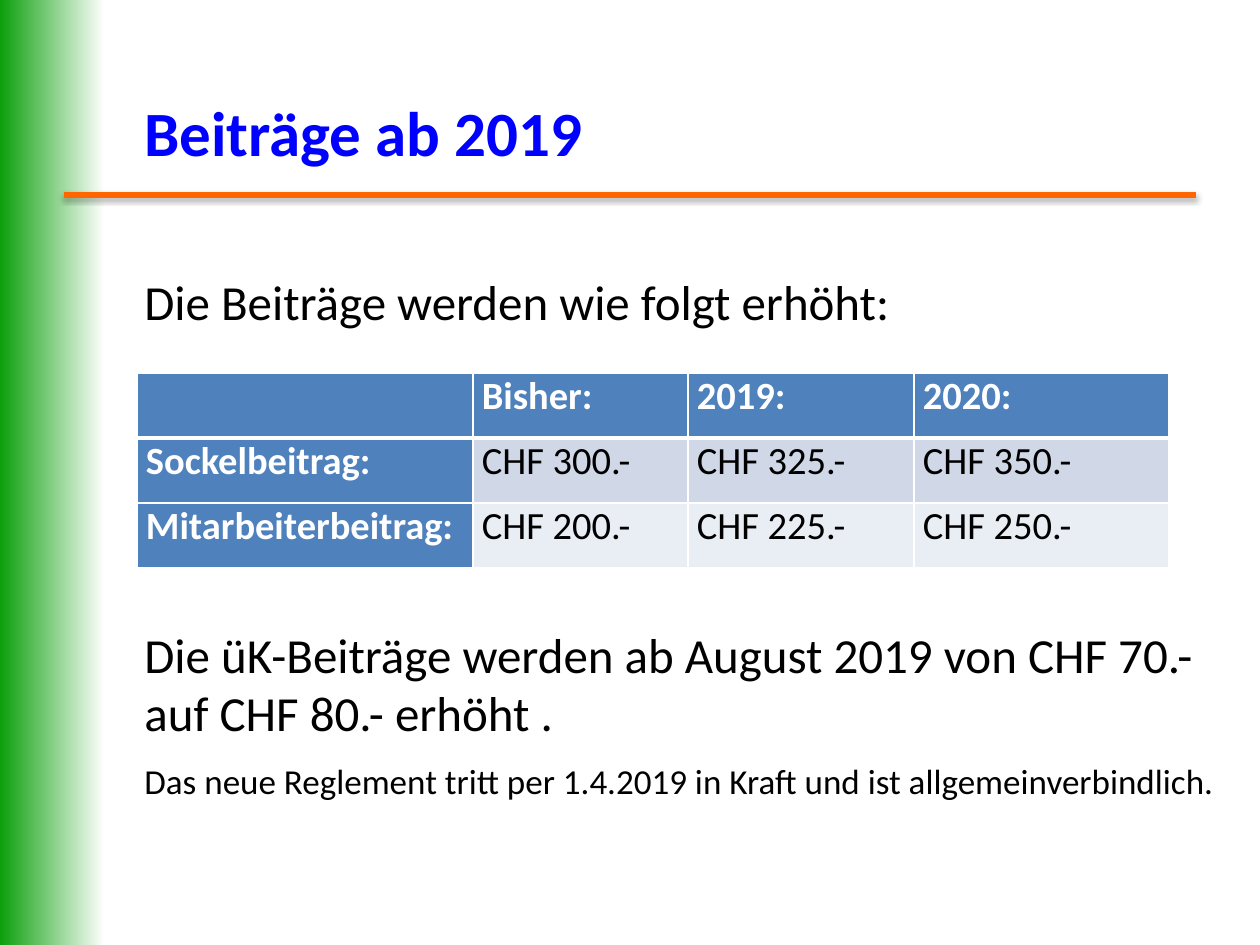
from lxml.etree import SubElement as Sub
from pptx import Presentation
from pptx.dml.color import RGBColor
from pptx.enum.shapes import MSO_CONNECTOR as Link, MSO_SHAPE as Shape
from pptx.enum.text import MSO_ANCHOR as Anchor
from pptx.oxml.ns import qn
from pptx.util import Pt

PX = 914400 / 126  # EMU per pixel
FONT = "Calibri"
BLUE, WHITE = "4F81BD", "FFFFFF"


def px(n):
    return round(n * PX)


def color(code):
    return RGBColor.from_string(code)


def write(para, text, size=28, ink="000000", bold=False, before=0, after=0):
    para.space_before, para.space_after = Pt(before), Pt(after)
    run = para.add_run()
    run.text = text
    font = run.font
    font.name, font.size, font.bold = FONT, Pt(size), bold
    font.color.rgb = color(ink)


def add_box(slide, x, y, w, h, anchor=Anchor.TOP):
    frame = slide.shapes.add_textbox(px(x), px(y), px(w), px(h)).text_frame
    frame.word_wrap = True
    frame.vertical_anchor = anchor
    return frame


def add_band(slide, x, y, w, h, start, end):
    band = slide.shapes.add_shape(Shape.RECTANGLE, px(x), px(y), px(w), px(h))
    band.shadow.inherit = False
    band.line.fill.background()
    band.fill.gradient()
    band.fill.gradient_angle = 0
    for stop, pos, code in zip(band.fill.gradient_stops, (0, 1), (start, end)):
        stop.position = pos
        stop.color.rgb = color(code)


def add_rule(slide, left, right, y, ink, width):
    rule = slide.shapes.add_connector(Link.STRAIGHT, px(left), px(y), px(right), px(y))
    rule.line.color.rgb = color(ink)
    rule.line.width = Pt(width)
    # Soft shadow straight below
    effects = Sub(rule._element.spPr, qn("a:effectLst"))
    shade = Sub(effects, qn("a:outerShdw"), blurRad=str(Pt(3.1)), dist=str(Pt(1.6)),
                dir="5400000", rotWithShape="0")
    black = Sub(shade, qn("a:srgbClr"), val="000000")
    Sub(black, qn("a:alpha"), val="38000")


def add_edges(cell, **widths):
    props = cell._tc.get_or_add_tcPr()
    for side in "LRTB":
        edge = Sub(props, qn("a:ln" + side), w=str(Pt(widths.get(side, 1))))
        Sub(Sub(edge, qn("a:solidFill")), qn("a:srgbClr"), val=WHITE)


def add_table(slide, x, y, cols, high, rows, fills):
    table = slide.shapes.add_table(len(rows), len(cols), px(x), px(y),
                                   px(sum(cols)), px(high * len(rows))).table
    for col, wide in zip(table.columns, cols):
        col.width = px(wide)
    for r, row in enumerate(rows):
        table.rows[r].height = px(high)
        for c, text in enumerate(row):
            cell = table.cell(r, c)
            head = r == 0 or c == 0
            cell.margin_left = cell.margin_right = px(9)
            cell.margin_top = cell.margin_bottom = 0
            # The header row is set off by a thicker edge
            add_edges(cell, B=3 if r == 0 else 1, T=3 if r == 1 else 1)
            cell.fill.solid()
            cell.fill.fore_color.rgb = color(BLUE if head else fills[r])
            if text:
                write(cell.text_frame.paragraphs[0], text, size=22, bold=head,
                      ink=WHITE if head else "000000", before=3, after=3)


def main():
    deck = Presentation()
    deck.slide_width, deck.slide_height = px(1260), px(945)
    slide = deck.slides.add_slide(deck.slide_layouts[6])

    # Side band and title rule
    add_band(slide, -5, 0, 110, 949, "009B00", WHITE)
    add_rule(slide, 64, 1196, 195, "FF6600", 3)

    # Title and lead-in
    title = add_box(slide, 132, 76, 1082, 110, Anchor.MIDDLE)
    write(title.paragraphs[0], "Beiträge ab 2019", size=36, ink="0000FF", bold=True)
    intro = add_box(slide, 132, 265, 1102, 75)
    write(intro.paragraphs[0], "Die Beiträge werden wie folgt erhöht:")

    # Contribution table
    rows = [
        ("", "Bisher:", "2019:", "2020:"),
        ("Sockelbeitrag:", "CHF 300.-", "CHF 325.-", "CHF 350.-"),
        ("Mitarbeiterbeitrag:", "CHF 200.-", "CHF 225.-", "CHF 250.-"),
    ]
    add_table(slide, 137, 373, (336, 215, 226, 255), 65, rows, (BLUE, "D0D8E8", "E9EDF4"))

    # Closing notes
    notes = add_box(slide, 132, 618, 1102, 203)
    write(notes.paragraphs[0],
          "Die üK-Beiträge werden ab August 2019 von CHF 70.- auf CHF 80.- erhöht .")
    write(notes.add_paragraph(),
          "Das neue Reglement tritt per 1.4.2019 in Kraft und ist allgemeinverbindlich.",
          size=20, before=10)

    deck.save("out.pptx")


if __name__ == "__main__":
    main()
